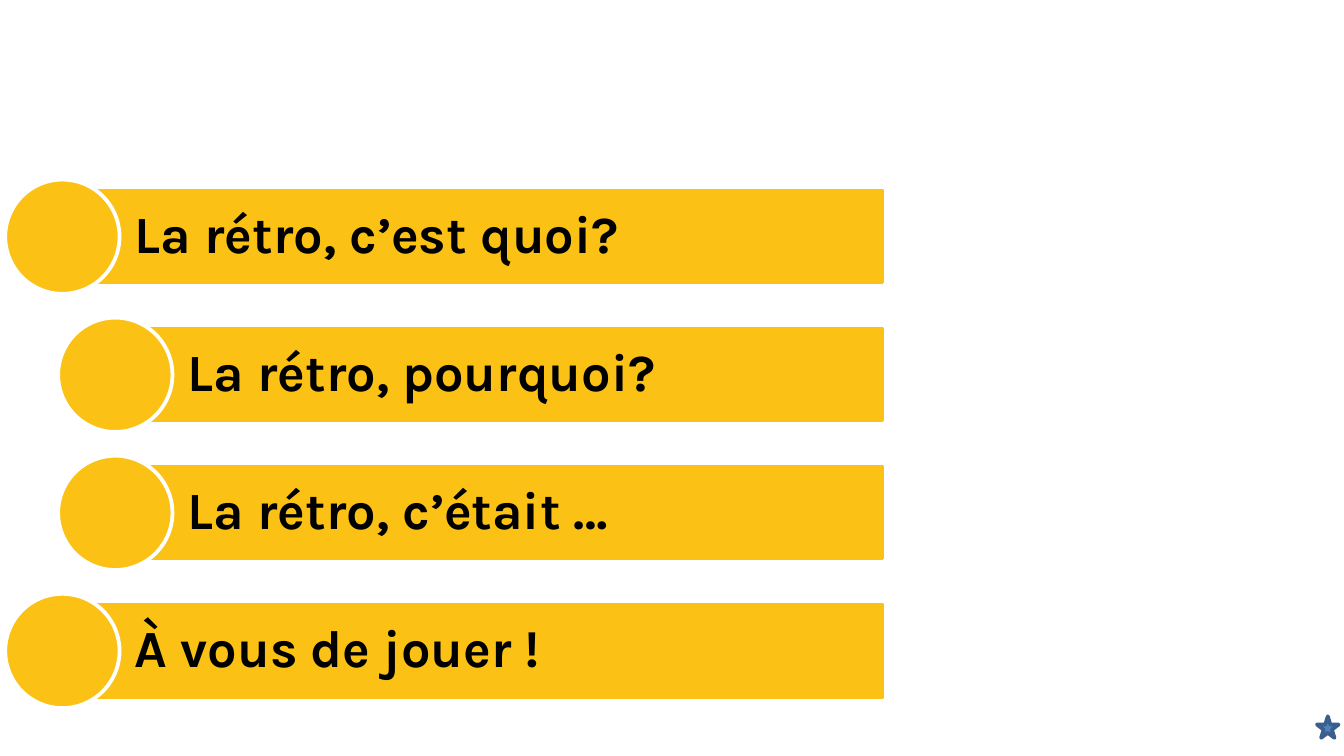
from pptx import Presentation
from pptx import util as u
from pptx.dml.color import RGBColor
from pptx.enum import shapes, text

COLOURS = {
    "yellow": "FBC215",
    "white": "FFFFFF",
    "black": "000000",
    "blue": "4F81BD",
    "navy": "3A5F8C",
}

# Agenda wording and the left edge of each bar, in cm
AGENDA = [
    ("La rétro, c’est quoi?", 1.18),
    ("La rétro, pourquoi?", 2.18),
    ("La rétro, c’était …", 2.18),
    ("À vous de jouer !", 1.18),
]
BAR_TOP, BAR_PITCH, BAR_HEIGHT, BAR_RIGHT = 3.61, 2.61, 1.73, 16.68
CIRCLE_SIZE = 2.16

FRAME_FORMAT = {
    "word_wrap": True,
    "vertical_anchor": text.MSO_ANCHOR.MIDDLE,
    "margin_left": u.Cm(1.37),
    "margin_top": u.Cm(0.2),
    "margin_right": u.Cm(0.2),
    "margin_bottom": u.Cm(0.2),
}
PARA_FORMAT = {"alignment": text.PP_ALIGN.LEFT, "line_spacing": 0.9}
FONT_FORMAT = {"name": "Karla", "size": u.Pt(28), "bold": True}


def colour(name):
    return RGBColor.from_string(COLOURS[name])


def apply_format(target, values):
    for name, value in values.items():
        setattr(target, name, value)


def add_figure(page, kind, left, top, width, height, fill, line):
    figure = page.shapes.add_shape(
        kind, u.Cm(left), u.Cm(top), u.Cm(width), u.Cm(height))
    figure.shadow.inherit = False
    figure.fill.solid()
    figure.fill.fore_color.rgb = colour(fill)
    figure.line.color.rgb = colour(line)
    figure.line.width = u.Pt(2)
    return figure


def add_label(box, wording):
    apply_format(box.text_frame, FRAME_FORMAT)
    para = box.text_frame.paragraphs[0]
    apply_format(para, PARA_FORMAT)
    span = para.add_run()
    span.text = wording
    apply_format(span.font, FONT_FORMAT)
    span.font.color.rgb = colour("black")


def add_agenda_item(page, wording, left, top):
    bar = add_figure(page, shapes.MSO_SHAPE.RECTANGLE, left, top,
                     BAR_RIGHT - left, BAR_HEIGHT, "yellow", "yellow")
    add_label(bar, wording)
    # The circle is centred on the left edge of its bar
    add_figure(page, shapes.MSO_SHAPE.OVAL,
               left - CIRCLE_SIZE / 2,
               top + (BAR_HEIGHT - CIRCLE_SIZE) / 2,
               CIRCLE_SIZE, CIRCLE_SIZE, "yellow", "white")


def main():
    deck = Presentation()
    deck.slide_width, deck.slide_height = u.Cm(25.4), u.Cm(14.29)
    page = deck.slides.add_slide(deck.slide_layouts[6])

    # Agenda
    for index, (wording, left) in enumerate(AGENDA):
        add_agenda_item(page, wording, left, BAR_TOP + index * BAR_PITCH)

    # Corner star
    add_figure(page, shapes.MSO_SHAPE.STAR_5_POINT,
               24.89, 13.54, 0.41, 0.41, "blue", "navy")

    deck.save("out.pptx")


if __name__ == "__main__":
    main()
